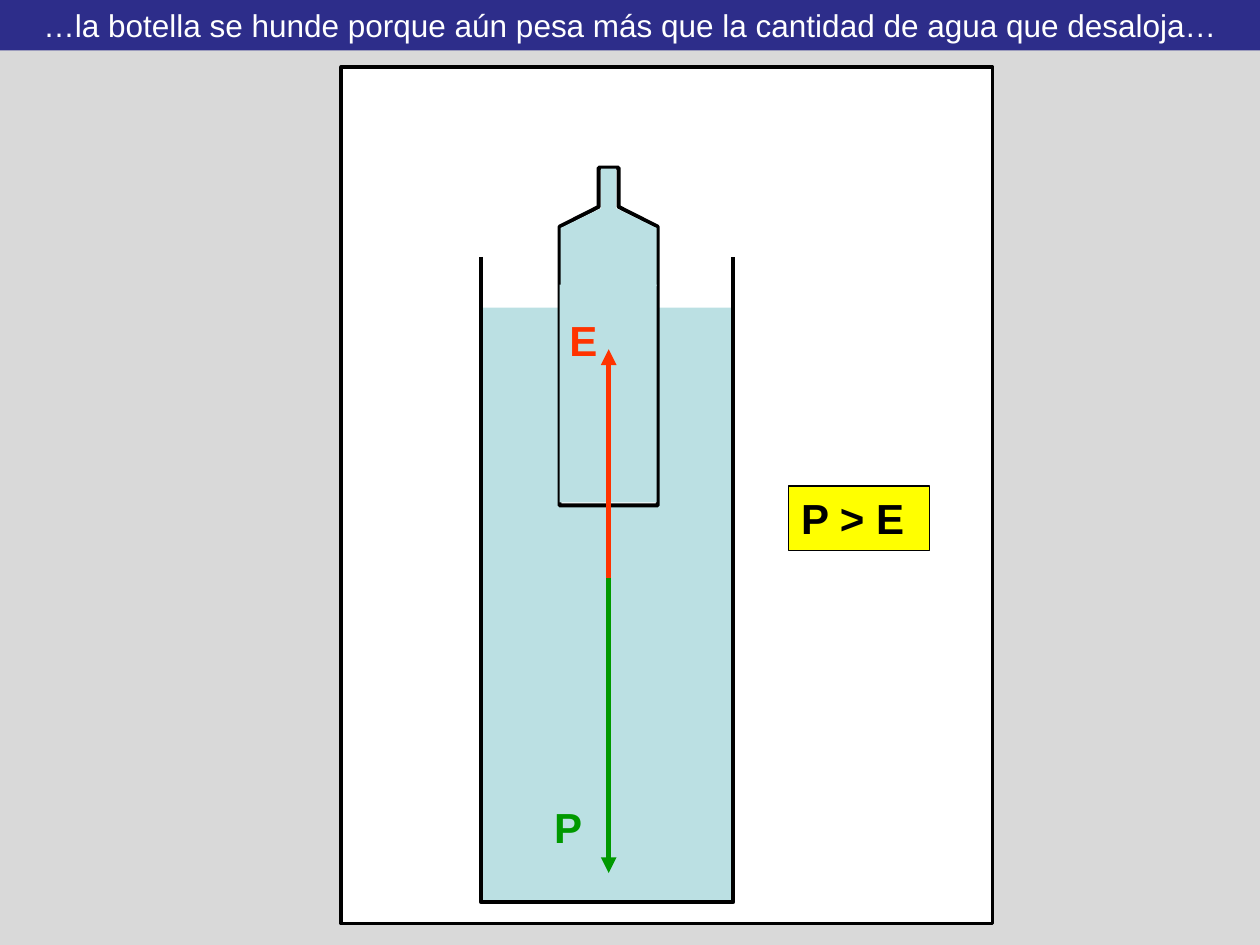
"""Slide on why a bottle sinks while its weight exceeds the buoyant force."""
from lxml.etree import SubElement
from pptx import Presentation
from pptx.dml.color import RGBColor
from pptx.enum.shapes import MSO_CONNECTOR, MSO_SHAPE
from pptx.enum.text import MSO_ANCHOR, PP_ALIGN
from pptx.oxml.ns import qn
from pptx.util import Cm, Pt

BLACK = RGBColor(0x00, 0x00, 0x00)
WHITE = RGBColor(0xFF, 0xFF, 0xFF)
GREY = RGBColor(0xD9, 0xD9, 0xD9)
NAVY = RGBColor(0x2D, 0x2D, 0x8A)
WATER = RGBColor(0xBB, 0xE0, 0xE3)
YELLOW = RGBColor(0xFF, 0xFF, 0x00)
GREEN = RGBColor(0x00, 0x99, 0x00)
RED = RGBColor(0xFF, 0x33, 0x00)

TITLE = "…la botella se hunde porque aún pesa más que la cantidad de agua que desaloja…"
RELATION = "P > E"
AXIS, ORIGIN = 12.27, 11.66
FORCES = [
    ("P", GREEN, 17.6, (10.92, 16.03)),
    ("E", RED, 7.04, (11.23, 6.22)),
]
TANK = [(9.7, 5.18), (9.7, 18.19), (14.78, 18.19), (14.78, 5.18)]
BOTTLE = [(0.2, 3.38), (0.2, 4.17), (0.99, 4.57), (0.99, 10.19)]
BOTTLE_TOP = [(0.15, 3.4), (0.15, 4.2), (0.97, 4.6), (0.97, 5.77)]


def mirror(half):
    left = [(AXIS - dx, y) for dx, y in half]
    right = [(AXIS + dx, y) for dx, y in reversed(half)]
    return left + right


def style(sp, fill=None, line=None):
    sp.shadow.inherit = False
    if fill is None:
        sp.fill.background()
    else:
        sp.fill.solid()
        sp.fill.fore_color.rgb = fill
    if line is None:
        sp.line.fill.background()
    else:
        sp.line.color.rgb = BLACK
        sp.line.width = Pt(line)
    return sp


def add_rect(s, box, fill, line=None):
    sp = s.shapes.add_shape(MSO_SHAPE.RECTANGLE, *map(Cm, box))
    return style(sp, fill, line)


def add_outline(s, points, fill=None, line=None, close=True):
    pts = [(Cm(x), Cm(y)) for x, y in points]
    fb = s.shapes.build_freeform(*pts[0])
    fb.add_line_segments(pts[1:], close=close)
    return style(fb.convert_to_shape(), fill, line)


def set_text(sp, text, size=24, color=BLACK, bold=True, align=PP_ALIGN.LEFT,
             anchor=MSO_ANCHOR.TOP):
    tf = sp.text_frame
    tf.word_wrap = True
    tf.vertical_anchor = anchor
    p = tf.paragraphs[0]
    p.alignment = align
    r = p.add_run()
    r.text = text
    r.font.name = "Arial"
    r.font.size = Pt(size)
    r.font.bold = bold
    r.font.color.rgb = color


def add_force(s, name, color, tip, label):
    ends = map(Cm, (AXIS, ORIGIN, AXIS, tip))
    cx = s.shapes.add_connector(MSO_CONNECTOR.STRAIGHT, *ends)
    cx.line.color.rgb = color
    cx.line.width = Pt(3)
    ln = cx.line._get_or_add_ln()
    SubElement(ln, qn("a:tailEnd"), type="triangle")
    SubElement(cx._element.spPr, qn("a:effectLst"))
    tb = s.shapes.add_textbox(*map(Cm, (*label, 1.27, 1.27)))
    set_text(tb, name, color=color)


def main():
    prs = Presentation()
    prs.slide_width, prs.slide_height = Cm(25.4), Cm(19.05)
    s = prs.slides.add_slide(prs.slide_layouts[6])
    s.background.fill.solid()
    s.background.fill.fore_color.rgb = GREY

    add_rect(s, (6.88, 1.35, 13.13, 17.27), WHITE, 2)
    add_rect(s, (9.7, 6.2, 5.08, 11.99), WATER)
    add_outline(s, TANK, line=2.25, close=False)
    add_rect(s, (11.28, 9.19, 2.01, 5), WATER)
    add_outline(s, mirror(BOTTLE), WHITE, 2.25)
    add_rect(s, (11.28, 5.74, 1.96, 4.39), WATER)
    relation = add_rect(s, (15.9, 9.8, 2.84, 1.3), YELLOW, 0.75)
    set_text(relation, RELATION)
    add_outline(s, mirror(BOTTLE_TOP), WATER)
    title = add_rect(s, (0, 0, 25.4, 1.02), NAVY)
    set_text(title, TITLE, size=18, color=WHITE, bold=False,
             align=PP_ALIGN.CENTER, anchor=MSO_ANCHOR.MIDDLE)
    for force in FORCES:
        add_force(s, *force)
    prs.save("out.pptx")


if __name__ == "__main__":
    main()
